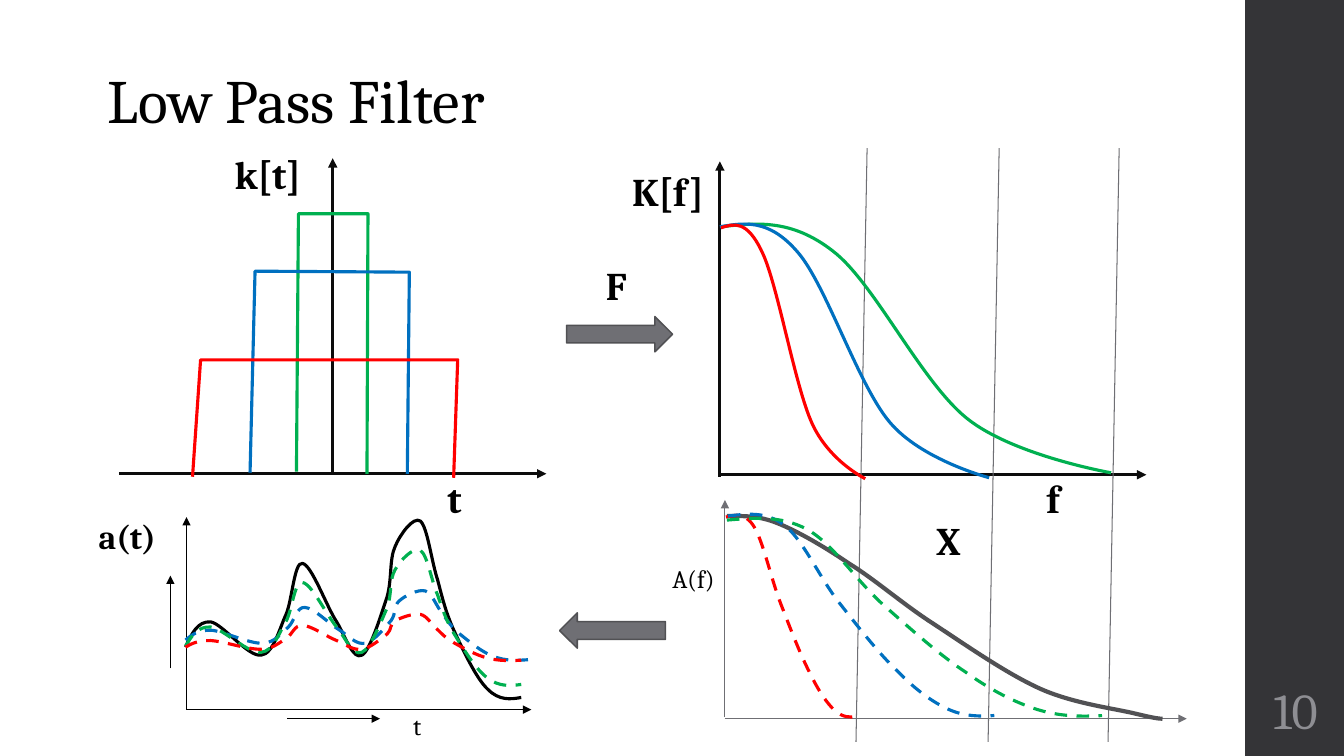
from typing import NamedTuple

from lxml import etree
from pptx import Presentation
from pptx.dml.color import RGBColor
from pptx.enum.dml import MSO_LINE
from pptx.enum.shapes import MSO_CONNECTOR, MSO_SHAPE
from pptx.enum.text import MSO_ANCHOR, PP_ALIGN
from pptx.oxml.ns import qn
from pptx.util import Inches, Pt

STRAIGHT = MSO_CONNECTOR.STRAIGHT
RECTANGLE, RIGHT_ARROW = MSO_SHAPE.RECTANGLE, MSO_SHAPE.RIGHT_ARROW
DASH = MSO_LINE.DASH
TOP, MIDDLE, BOTTOM = MSO_ANCHOR.TOP, MSO_ANCHOR.MIDDLE, MSO_ANCHOR.BOTTOM
LEFT, CENTER = PP_ALIGN.LEFT, PP_ALIGN.CENTER
FONT = "Cambria"
COLORS = {
    "black": "000000", "axis": "0C0C0C", "gray": "6F6F74", "dark gray": "515154",
    "panel": "343437", "number": "8E8E93",
    "green": "00B050", "blue": "0070C0", "red": "FF0000",
}

Points = list[tuple[float, float]]


class Line(NamedTuple):
    start: tuple[float, float]
    end: tuple[float, float]
    color: str
    width: float = 0.75
    arrow: bool = True


class Label(NamedTuple):
    text: str
    left: float
    top: float
    width: float
    height: float = 0.57
    size: float = 28
    bold: bool = True
    color: str = "black"
    align: PP_ALIGN = LEFT
    anchor: MSO_ANCHOR = TOP
    spacing: float = 1.0


class Curve(NamedTuple):
    """A Bézier outline moved to start at (left, top) and stretched."""
    outline: Points
    left: float
    top: float
    x_scale: float
    y_scale: float
    color: str
    width: float = 2.25
    dashed: bool = False


class Pulse(NamedTuple):
    corners: Points
    color: str


class BlockArrow(NamedTuple):
    left: float
    top: float
    rotation: float


# Each outline is a start point followed by triples of cubic control points.
KERNEL_RESPONSE = [
    (7.15, 2.25), (7.5, 2.21), (7.85, 2.17), (8.26, 2.49), (8.67, 2.8), (9.13, 3.78),
    (9.59, 4.15), (10.05, 4.52), (11.02, 4.69), (11.02, 4.69)]
SPECTRUM = [
    (7.21, 5.12), (7.36, 5.12), (7.51, 5.11), (7.71, 5.19), (7.91, 5.27), (8.17, 5.42),
    (8.42, 5.59), (8.68, 5.75), (8.95, 5.99), (9.26, 6.19), (9.58, 6.4), (9.98, 6.68),
    (10.31, 6.83), (10.64, 6.98), (11.06, 7.03), (11.26, 7.08), (11.47, 7.13),
    (11.5, 7.13), (11.53, 7.13)]
FILTERED_SPECTRUM = [
    (7.21, 5.16), (7.47, 5.14), (7.74, 5.11), (8, 5.25), (8.26, 5.39), (8.49, 5.76),
    (8.76, 6), (9.02, 6.23), (9.32, 6.5), (9.58, 6.67), (9.83, 6.85), (10.07, 6.97),
    (10.29, 7.04), (10.52, 7.11), (10.72, 7.11), (10.93, 7.1)]
SIGNAL = [
    (1.84, 6.42), (1.9, 6.29), (1.96, 6.16), (2.09, 6.17), (2.21, 6.19), (2.46, 6.52),
    (2.59, 6.5), (2.71, 6.49), (2.77, 6.24), (2.84, 6.09), (2.9, 5.94), (2.92, 5.57),
    (3, 5.59), (3.09, 5.6), (3.24, 6.02), (3.34, 6.17), (3.43, 6.32), (3.5, 6.55),
    (3.59, 6.5), (3.67, 6.46), (3.78, 6.1), (3.84, 5.92), (3.89, 5.74), (3.86, 5.55),
    (3.92, 5.42), (3.97, 5.3), (4.1, 5.12), (4.17, 5.17), (4.24, 5.23), (4.28, 5.57),
    (4.34, 5.75), (4.39, 5.94), (4.42, 6.07), (4.5, 6.25), (4.59, 6.44), (4.72, 6.73),
    (4.84, 6.84), (4.95, 6.95), (5.06, 6.94), (5.17, 6.92)]

AXES = [
    Line((3.3, 4.7), (3.3, 1.57), "axis", 2.25),
    Line((1.18, 4.7), (5.42, 4.7), "axis", 2.25),
    Line((7.14, 4.73), (7.14, 1.6), "axis", 2.25),
    Line((7.14, 4.71), (11.37, 4.71), "axis", 2.25),
    Line((7.19, 7.13), (11.77, 7.13), "gray"),
    Line((7.19, 7.11), (7.19, 4.96), "gray"),
    Line((1.85, 7.04), (5.27, 7.04), "black"),
    Line((1.85, 7.04), (1.85, 5.13), "black"),
    Line((2.85, 7.13), (3.77, 7.13), "black"),
    Line((1.69, 6.63), (1.69, 5.71), "black"),
]
PULSES = [
    Pulse([(2.94, 4.68), (2.96, 2.12), (3.65, 2.12), (3.64, 4.7)], "green"),
    Pulse([(2.48, 4.69), (2.53, 2.69), (4.06, 2.7), (4.04, 4.7)], "blue"),
    Pulse([(1.91, 4.73), (1.99, 3.57), (4.54, 3.57), (4.5, 4.74)], "red"),
]
FREQUENCY_CURVES = [
    Curve(KERNEL_RESPONSE, 7.15, 2.25, 1, 1, "green"),
    Curve(KERNEL_RESPONSE, 7.14, 2.25, 0.69, 1.02, "blue"),
    Curve(KERNEL_RESPONSE, 7.15, 2.26, 0.37, 1.02, "red"),
    Curve(SPECTRUM, 7.21, 5.12, 1, 1, "dark gray", 3),
]
CUTOFFS = [Line((x, 1.47), (x - 0.11, 7.36), "gray", arrow=False)
           for x in (11.1, 9.91, 8.6)]
FILTERED_CURVES = [
    Curve(FILTERED_SPECTRUM, 7.2, 5.13, 0.35, 1.02, "red", dashed=True),
    Curve(FILTERED_SPECTRUM, 7.22, 5.12, 0.71, 1.02, "blue", dashed=True),
    Curve(FILTERED_SPECTRUM, 7.21, 5.16, 1, 1, "green", dashed=True),
    Curve(SIGNAL, 1.84, 6.42, 1, 1, "black"),
    Curve(SIGNAL, 1.84, 6.35, 1.02, 0.39, "blue", dashed=True),
    Curve(SIGNAL, 1.84, 6.41, 1, 0.76, "green", dashed=True),
    Curve(SIGNAL, 1.84, 6.42, 1, 0.26, "red", dashed=True),
]
BLOCK_ARROWS = [BlockArrow(5.62, 3.14, 0), BlockArrow(5.55, 6.08, 180)]
TITLE = Label("Low Pass Filter", 0.97, 0.4, 11.01, 1.01, 44, False,
              anchor=BOTTOM, spacing=0.9)
LABELS = [
    Label("10", 12.35, 6.75, 1, 0.65, 36, False, "number", CENTER, MIDDLE, 0.9),
    Label("t", 4.34, 4.66, 0.37),
    Label("k[t]", 2.23, 1.44, 0.93),
    Label("F", 5.91, 2.54, 0.49),
    Label("f", 10.28, 4.66, 0.37),
    Label("K[f]", 6.17, 1.61, 0.98),
    Label("A(f)", 6.57, 5.54, 1.18, 0.4, 18, False),
    Label("X", 9.19, 5.07, 0.76),
    Label("t", 4, 7, 0.3, 0.4, 18, False),
    Label("a(t)", 0.88, 5.07, 0.81, 0.5, 24),
]


def rgb(color: str) -> RGBColor:
    return RGBColor.from_string(COLORS[color])


def write_label(box, label: Label) -> None:
    box.left, box.top = Inches(label.left), Inches(label.top)
    box.width, box.height = Inches(label.width), Inches(label.height)
    frame = box.text_frame
    frame.text = label.text
    frame.word_wrap = True
    frame.vertical_anchor = label.anchor
    paragraph = frame.paragraphs[0]
    paragraph.alignment, paragraph.line_spacing = label.align, label.spacing
    font = paragraph.runs[0].font
    font.name, font.size, font.bold = FONT, Pt(label.size), label.bold
    font.color.rgb = rgb(label.color)


def draw_line(shapes, line: Line) -> None:
    ends = [Inches(value) for value in (*line.start, *line.end)]
    connector = shapes.add_connector(STRAIGHT, *ends)
    connector.line.color.rgb = rgb(line.color)
    connector.line.width = Pt(line.width)
    if line.arrow:
        outline = connector.line._get_or_add_ln()
        etree.SubElement(outline, qn("a:tailEnd"), type="triangle")
    etree.SubElement(connector._element.spPr, qn("a:effectLst"))


def draw_outline(shapes, points: Points, color: str, width: float = 2.25):
    corners = [(Inches(x), Inches(y)) for x, y in points]
    builder = shapes.build_freeform(*corners[0])
    builder.add_line_segments(corners[1:], close=False)
    outline = builder.convert_to_shape()
    outline.shadow.inherit = False
    outline.fill.background()
    outline.line.color.rgb = rgb(color)
    outline.line.width = Pt(width)
    return outline


def bend_segments(outline) -> None:
    """Join every three straight segments into one cubic Bézier segment."""
    track = next(outline._element.iter(qn("a:path")))
    segments = track.findall(qn("a:lnTo"))
    for first in range(0, len(segments), 3):
        bend = etree.SubElement(track, qn("a:cubicBezTo"))
        for segment in segments[first:first + 3]:
            bend.append(segment[0])
            track.remove(segment)


def draw_curve(shapes, curve: Curve) -> None:
    x0, y0 = curve.outline[0]
    points = [(curve.left + (x - x0) * curve.x_scale, curve.top + (y - y0) * curve.y_scale)
              for x, y in curve.outline]
    outline = draw_outline(shapes, points, curve.color, curve.width)
    bend_segments(outline)
    if curve.dashed:
        outline.line.dash_style = DASH


def fill_shape(shape, color: str) -> None:
    shape.shadow.inherit = False
    shape.fill.solid()
    shape.fill.fore_color.rgb = rgb(color)


def draw_block_arrow(shapes, arrow: BlockArrow) -> None:
    block = shapes.add_shape(RIGHT_ARROW, Inches(arrow.left), Inches(arrow.top),
                             Inches(1.05), Inches(0.35))
    block.rotation = arrow.rotation
    fill_shape(block, "gray")
    block.line.color.rgb = rgb("dark gray")
    block.line.width = Pt(1.1)


def main() -> None:
    deck = Presentation()
    deck.slide_width, deck.slide_height = Inches(13.33), Inches(7.5)
    shapes = deck.slides.add_slide(deck.slide_layouts[5]).shapes
    write_label(shapes.title, TITLE)
    panel = shapes.add_shape(RECTANGLE, Inches(12.35), 0, Inches(0.98), Inches(7.5))
    fill_shape(panel, "panel")
    panel.line.fill.background()
    for line in AXES + CUTOFFS:
        draw_line(shapes, line)
    for pulse in PULSES:
        draw_outline(shapes, pulse.corners, pulse.color)
    for curve in FREQUENCY_CURVES + FILTERED_CURVES:
        draw_curve(shapes, curve)
    for arrow in BLOCK_ARROWS:
        draw_block_arrow(shapes, arrow)
    for label in LABELS:
        write_label(shapes.add_textbox(0, 0, 0, 0), label)
    deck.save("out.pptx")


if __name__ == "__main__":
    main()
